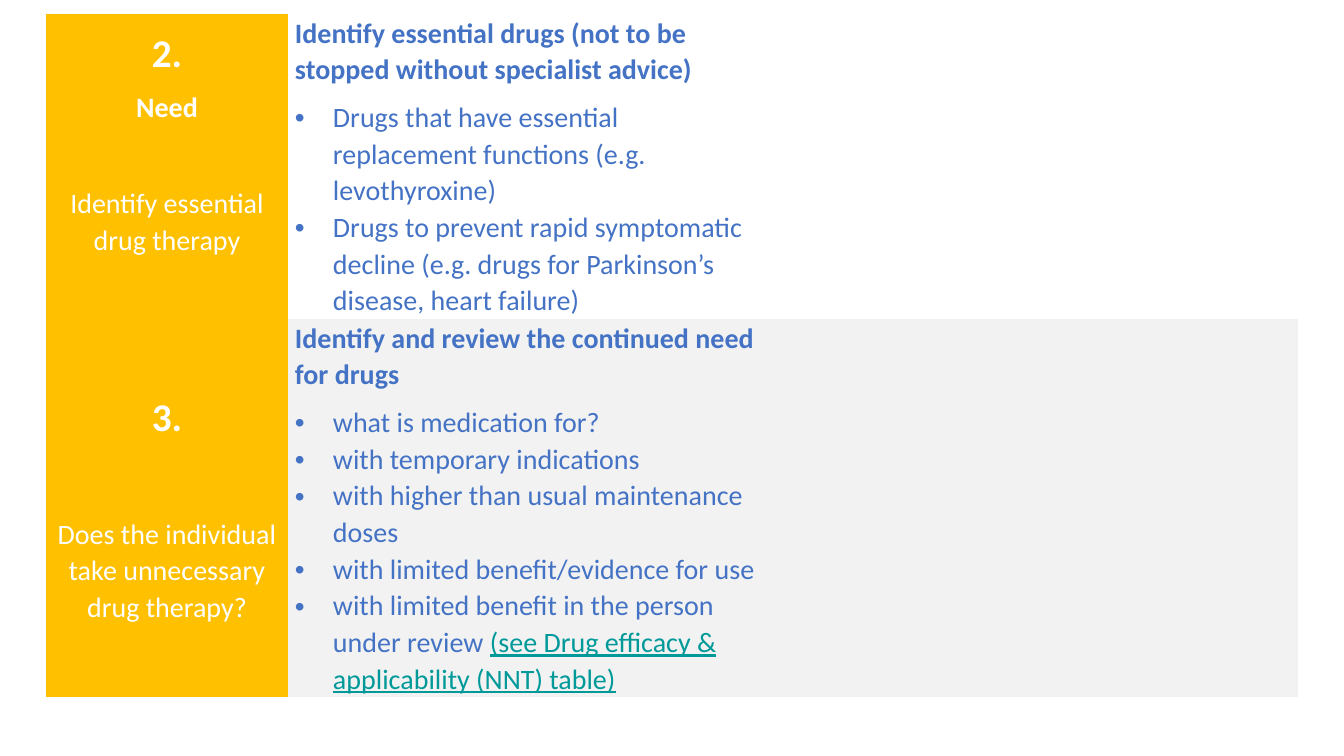
from lxml.etree import SubElement
from pptx import Presentation
from pptx.dml.color import RGBColor
from pptx.enum.text import MSO_ANCHOR, PP_ALIGN
from pptx.oxml.ns import qn
from pptx.util import Pt

SCALE = 914400 / 100.8
WHITE, AMBER, GREY = "FFFFFF", "FFC000", "F2F2F2"
BLUE, TEAL = "4472C4", "009999"
COLUMN_WIDTHS = (242, 482, 528)
NO_STYLE = "{2D5ABB26-0587-4C30-8999-92F81FD0307C}"

STEPS = [
    {
        "height": 305,
        "fill": None,
        "bottom": 48,
        "label": [
            ("2.", 28, True, 7),
            ("Need", 20, True, 43),
            ("Identify essential drug therapy", 20, False, 0),
        ],
        "heading": "Identify essential drugs (not to be stopped without specialist advice)",
        "points": [
            "Drugs that have essential replacement functions (e.g. levothyroxine)",
            "Drugs to prevent rapid symptomatic decline "
            "(e.g. drugs for Parkinson’s disease, heart failure)",
        ],
        "reference": "",
    },
    {
        "height": 377,
        "fill": GREY,
        "bottom": 0,
        "label": [
            ("3.", 28, True, 52),
            ("Does the individual take unnecessary drug therapy?", 20, False, 0),
        ],
        "heading": "Identify and review the continued need for drugs",
        "points": [
            "what is medication for?",
            "with temporary indications",
            "with higher than usual maintenance doses",
            "with limited benefit/evidence for use",
            "with limited benefit in the person under review ",
        ],
        "reference": "(see Drug efficacy & applicability (NNT) table)",
    },
]


def px(length):
    return round(length * SCALE)


def color(value):
    return RGBColor.from_string(value)


def assign(target, values):
    for name, value in values.items():
        setattr(target, name, value)


def fill_cell(cell, value):
    if value is None:
        cell.fill.background()
    else:
        cell.fill.solid()
        cell.fill.fore_color.rgb = color(value)


def add_paragraph(cell, index, layout):
    frame = cell.text_frame
    paragraph = frame.add_paragraph() if index else frame.paragraphs[0]
    assign(paragraph, {"line_spacing": 1.07, "space_before": Pt(0), **layout})
    return paragraph


def add_run(paragraph, text, value, size=20, **style):
    run = paragraph.add_run()
    run.text = text
    assign(run.font, {"name": "Calibri", "size": Pt(size), "bold": False, **style})
    run.font.color.rgb = color(value)


def add_bullet(paragraph):
    properties = paragraph._p.get_or_add_pPr()
    properties.set("marL", str(px(38)))
    properties.set("indent", str(-px(38)))
    SubElement(properties, qn("a:buFont")).set("typeface", "Arial")
    SubElement(properties, qn("a:buChar")).set("char", "•")


def fill_label(cell, step):
    fill_cell(cell, AMBER)
    assign(cell, {"vertical_anchor": MSO_ANCHOR.MIDDLE, "margin_bottom": px(step["bottom"])})
    for index, (text, size, bold, gap) in enumerate(step["label"]):
        layout = {"alignment": PP_ALIGN.CENTER, "space_after": Pt(gap)}
        paragraph = add_paragraph(cell, index, layout)
        add_run(paragraph, text, WHITE, size, bold=bold)


def fill_guidance(cell, step):
    heading = add_paragraph(cell, 0, {"space_after": Pt(8)})
    add_run(heading, step["heading"], BLUE, bold=True)
    for index, text in enumerate(step["points"], 1):
        paragraph = add_paragraph(cell, index, {"space_after": Pt(0)})
        add_bullet(paragraph)
        add_run(paragraph, text, BLUE)
    if step["reference"]:
        add_run(paragraph, step["reference"], TEAL, underline=True)


def add_review_table(slide, left, top, widths, steps):
    height = sum(step["height"] for step in steps)
    box = [px(length) for length in (left, top, sum(widths), height)]
    shape = slide.shapes.add_table(len(steps), len(widths), *box)
    shape.element.find(".//" + qn("a:tableStyleId")).text = NO_STYLE
    table = shape.table
    assign(table, {"first_row": False, "horz_banding": False})
    for column, width in zip(table.columns, widths):
        column.width = px(width)
    for row, step in zip(table.rows, steps):
        row.height = px(step["height"])
        margins = {"margin_left": px(7), "margin_right": px(7), "margin_top": 0, "margin_bottom": 0}
        for cell in row.cells:
            assign(cell, margins)
            fill_cell(cell, step["fill"])
        fill_label(row.cells[0], step)
        fill_guidance(row.cells[1], step)


def main():
    presentation = Presentation()
    assign(presentation, {"slide_width": px(1344), "slide_height": px(756)})
    slide = presentation.slides.add_slide(presentation.slide_layouts[6])
    add_review_table(slide, 46, 14, COLUMN_WIDTHS, STEPS)
    presentation.save("out.pptx")


if __name__ == "__main__":
    main()
